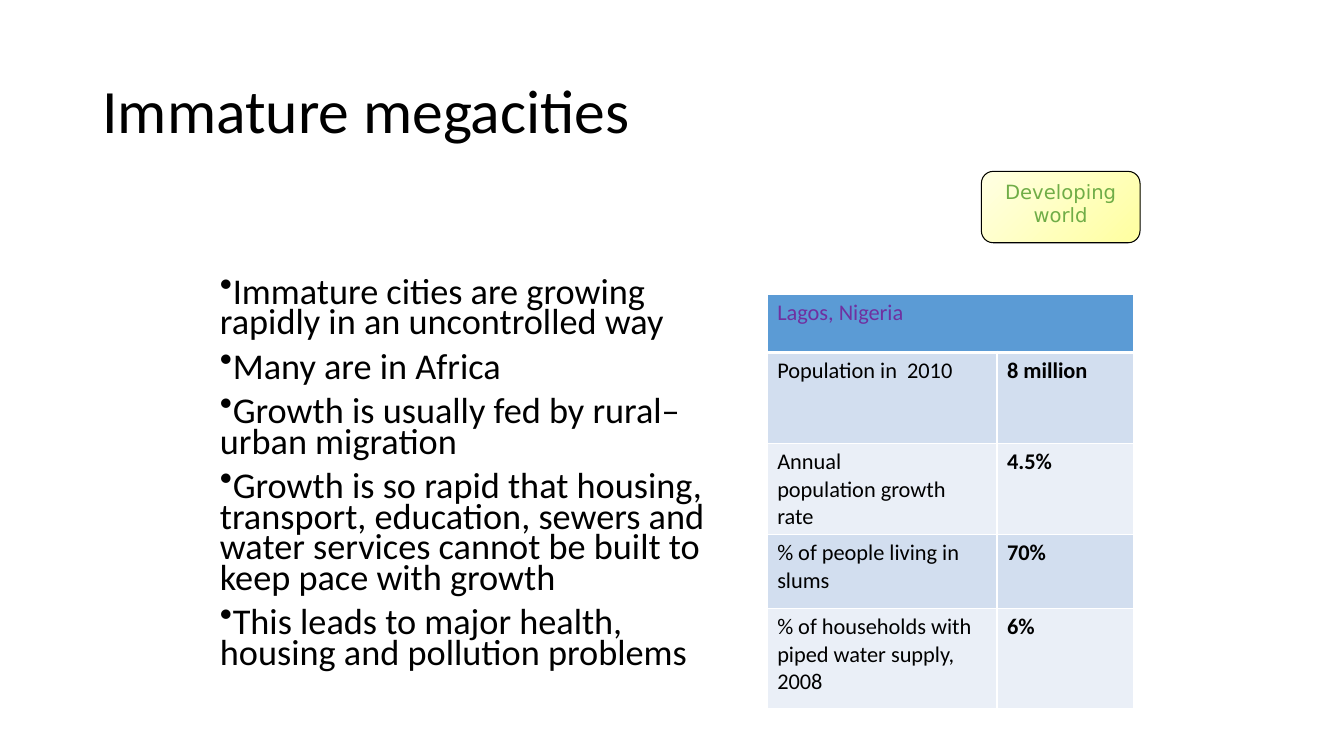
from dataclasses import dataclass

from lxml.etree import SubElement
from pptx import Presentation
from pptx.dml.color import RGBColor as Rgb
from pptx.enum.shapes import MSO_SHAPE as Shape
from pptx.enum.text import MSO_ANCHOR as Anchor, PP_ALIGN as Align
from pptx.oxml import parse_xml
from pptx.oxml.ns import nsdecls, qn
from pptx.util import Pt


@dataclass(frozen=True)
class Theme:
    font: str = "Calibri"
    label_font: str = "DejaVu Sans"
    ink: str = "000000"
    city: str = "7030A0"
    label: str = "70AD47"
    label_fill: tuple = ("FFFFA0", "FFFFE3")
    header: str = "5B9BD5"
    bands: tuple = ("D2DEEF", "EAEFF7")
    border: str = "FFFFFF"
    title_size: float = 44
    body_size: float = 25.9
    table_size: float = 16
    label_size: float = 14


class SlideBuilder:
    def __init__(self, slide, theme):
        self.slide = slide
        self.theme = theme

    def add_run(self, paragraph, text, size, color=None, font=None, bold=False):
        run = paragraph.add_run()
        run.text = text
        run.font.size = Pt(size)
        run.font.name = font or self.theme.font
        run.font.bold = bold
        run.font.color.rgb = Rgb.from_string(color or self.theme.ink)

    def paragraphs(self, frame, count):
        for _ in range(count - 1):
            frame.add_paragraph()
        return frame.paragraphs

    def title(self, text, left, top, width, height):
        heading = self.slide.shapes.title
        heading.left, heading.top = Pt(left), Pt(top)
        heading.width, heading.height = Pt(width), Pt(height)
        frame = heading.text_frame
        frame.vertical_anchor = Anchor.MIDDLE
        paragraph = frame.paragraphs[0]
        paragraph.alignment = Align.LEFT
        paragraph.line_spacing = 0.9
        self.add_run(paragraph, text, self.theme.title_size)

    def bullets(self, points, left, top, width, height):
        frame = self.slide.shapes.add_textbox(
            Pt(left), Pt(top), Pt(width), Pt(height)).text_frame
        frame.word_wrap = True
        for paragraph, point in zip(self.paragraphs(frame, len(points)), points):
            paragraph.line_spacing = 0.7
            paragraph.space_before = Pt(10)
            SubElement(paragraph._p.get_or_add_pPr(), qn("a:buChar"), char="•")
            self.add_run(paragraph, point, self.theme.body_size)

    def label(self, text, left, top, width, height):
        theme = self.theme
        badge = self.slide.shapes.add_shape(
            Shape.ROUNDED_RECTANGLE, Pt(left), Pt(top), Pt(width), Pt(height))
        badge.shadow.inherit = False
        badge.fill.gradient()
        badge.fill.gradient_angle = 135
        for stop, color in zip(badge.fill.gradient_stops, theme.label_fill):
            stop.color.rgb = Rgb.from_string(color)
        badge.line.color.rgb = Rgb.from_string(theme.ink)
        badge.line.width = Pt(0.75)
        frame = badge.text_frame
        frame.word_wrap = True
        frame.vertical_anchor = Anchor.TOP
        paragraph = frame.paragraphs[0]
        paragraph.alignment = Align.CENTER
        self.add_run(paragraph, text, theme.label_size, theme.label, theme.label_font)

    def cell(self, cell, lines, fill, color=None, bold=False, bottom=1):
        properties = cell._tc.get_or_add_tcPr()
        widths = {"lnL": 1, "lnR": 1, "lnT": 1, "lnB": bottom}
        for side, width in widths.items():
            properties.append(parse_xml(
                f'<a:{side} {nsdecls("a")} w="{Pt(width)}"><a:solidFill>'
                f'<a:srgbClr val="{self.theme.border}"/></a:solidFill></a:{side}>'))
        cell.fill.solid()
        cell.fill.fore_color.rgb = Rgb.from_string(fill)
        for paragraph, line in zip(self.paragraphs(cell.text_frame, len(lines)), lines):
            self.add_run(paragraph, line, self.theme.table_size, color, bold=bold)

    def fact_table(self, city, facts, left, top, widths, heights):
        theme = self.theme
        table = self.slide.shapes.add_table(
            len(heights), len(widths), Pt(left), Pt(top),
            Pt(sum(widths)), Pt(sum(heights))).table
        table.first_row = table.horz_banding = False
        for column, width in zip(table.columns, widths):
            column.width = Pt(width)
        for row, height in zip(table.rows, heights):
            row.height = Pt(height)
        # City header across both columns
        table.cell(0, 0).merge(table.cell(0, 1))
        self.cell(table.cell(0, 0), [city], theme.header, theme.city, bottom=3)
        # Banded facts
        for row, (measure, value) in enumerate(facts, start=1):
            band = theme.bands[(row - 1) % 2]
            self.cell(table.cell(row, 0), measure, band)
            self.cell(table.cell(row, 1), [value], band, bold=True)


def main():
    deck = Presentation()
    deck.slide_width, deck.slide_height = Pt(960), Pt(540)
    slide = deck.slides.add_slide(deck.slide_layouts[5])
    builder = SlideBuilder(slide, Theme())

    # Title and main points
    builder.title("Immature megacities", 66, 28.75, 828, 104.4)
    builder.bullets([
        "Immature cities are growing rapidly in an uncontrolled way",
        "Many are in Africa",
        "Growth is usually fed by rural–urban migration",
        "Growth is so rapid that housing, transport, education, sewers and "
        "water services cannot be built to keep pace with growth",
        "This leads to major health, housing and pollution problems",
    ], 150, 196.5, 375, 314)

    # Lagos facts
    builder.fact_table("Lagos, Nigeria", [
        (["Population in  2010"], "8 million"),
        (["Annual", "population growth rate"], "4.5%"),
        (["% of people living in slums"], "70%"),
        (["% of households with piped water supply, 2008"], "6%"),
    ], 548, 210.3, widths=(164.2, 97.2), heights=(41.5, 65, 65, 52.8, 71.8))

    # Development label
    builder.label("Developing world", 701, 122.4, 113.3, 51)

    deck.save("out.pptx")


if __name__ == "__main__":
    main()
